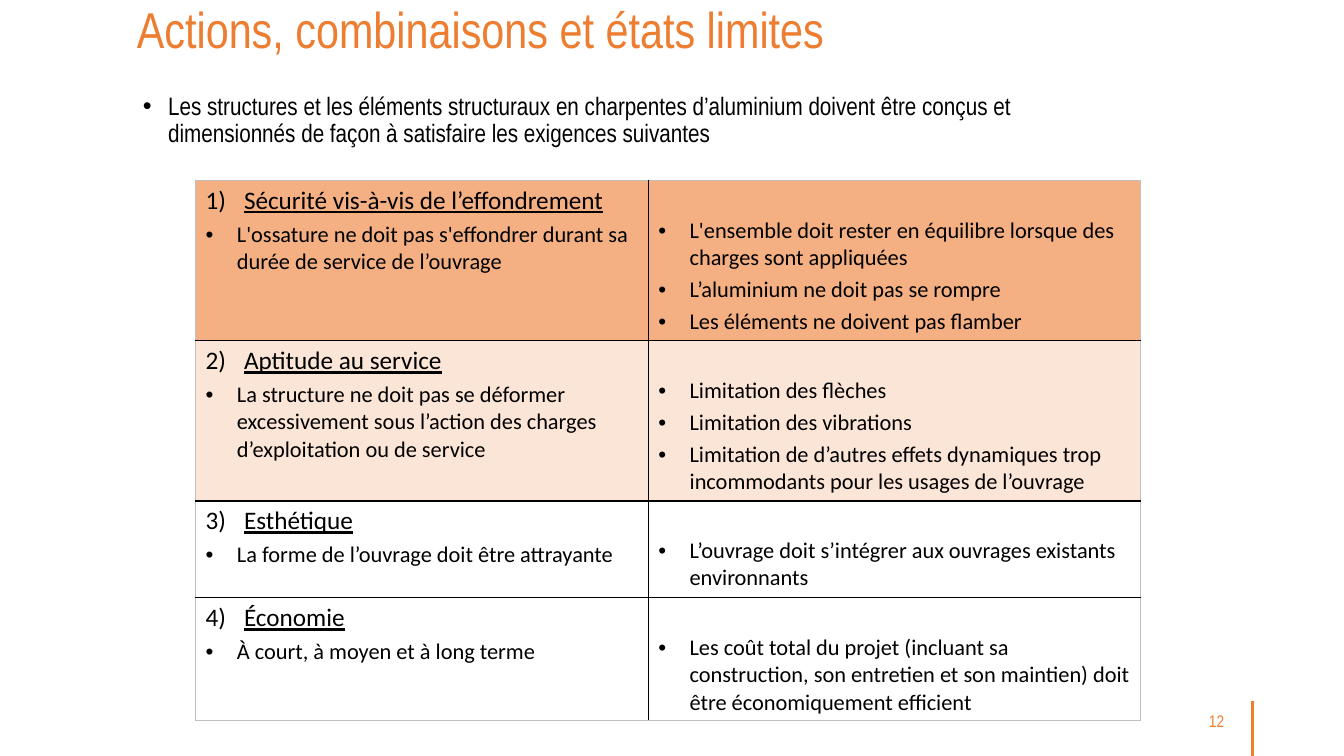
"""Builds the slide on actions, combinations and limit states."""
from dataclasses import dataclass

from lxml.etree import SubElement
from pptx import Presentation
from pptx.dml.color import RGBColor
from pptx.enum.shapes import MSO_CONNECTOR as Connector
from pptx.enum.text import MSO_ANCHOR as Anchor, PP_ALIGN as Align
from pptx.oxml.ns import qn
from pptx.util import Inches, Pt


@dataclass(frozen=True)
class Theme:
    accent: str = "ED7D31"
    ink: str = "000000"
    frame: str = "BFBFBF"
    strong: str = "F4B083"
    pale: str = "FBE5D6"
    display: str = "Arial Narrow"
    body: str = "Calibri"
    title_size: float = 36
    lead_size: float = 18
    item_size: float = 16
    number_size: float = 12
    item_gap: float = 3.2


THEME = Theme()
COLUMNS = (4.49, 4.88)
REQUIREMENTS = [
    (1.59, THEME.strong, "Sécurité vis-à-vis de l’effondrement",
     "L'ossature ne doit pas s'effondrer durant sa durée de service de l’ouvrage",
     ["L'ensemble doit rester en équilibre lorsque des charges sont appliquées",
      "L’aluminium ne doit pas se rompre",
      "Les éléments ne doivent pas flamber"]),
    (1.59, THEME.pale, "Aptitude au service",
     "La structure ne doit pas se déformer excessivement sous l’action des charges "
     "d’exploitation ou de service",
     ["Limitation des flèches",
      "Limitation des vibrations",
      "Limitation de d’autres effets dynamiques trop incommodants pour les usages "
      "de l’ouvrage"]),
    (0.96, None, "Esthétique",
     "La forme de l’ouvrage doit être attrayante",
     ["L’ouvrage doit s’intégrer aux ouvrages existants environnants"]),
    (1.22, None, "Économie",
     "À court, à moyen et à long terme",
     ["Les coût total du projet (incluant sa construction, son entretien et son "
      "maintien) doit être économiquement efficient"]),
]


def add_marker(paragraph, number, indent, hanging):
    """Give a paragraph a numbered marker, or a bullet when number is None."""
    properties = paragraph._p.get_or_add_pPr()
    properties.set("marL", str(Inches(indent)))
    properties.set("indent", str(-Inches(hanging)))
    if number is None:
        SubElement(properties, qn("a:buFont"), typeface="Arial")
        SubElement(properties, qn("a:buChar"), char="•")
    else:
        SubElement(properties, qn("a:buFont"), typeface="+mj-lt")
        SubElement(properties, qn("a:buAutoNum"), type="arabicParenR", startAt=str(number))


def write(paragraph, text, *, size, font=THEME.body, color=THEME.ink, underline=False,
          align=Align.LEFT, line_spacing=None, space_before=0):
    """Write formatted text into a paragraph."""
    paragraph.alignment = align
    paragraph.space_before = Pt(space_before)
    if line_spacing:
        paragraph.line_spacing = line_spacing
    run = paragraph.add_run()
    run.text = text
    run.font.name = font
    run.font.size = Pt(size)
    run.font.underline = underline
    run.font.color.rgb = RGBColor.from_string(color)


def add_text_box(slide, left, top, width, height, anchor=Anchor.TOP):
    """Add a wrapping text box and return its first paragraph."""
    box = slide.shapes.add_textbox(Inches(left), Inches(top), Inches(width), Inches(height))
    box.text_frame.word_wrap = True
    box.text_frame.vertical_anchor = anchor
    return box.text_frame.paragraphs[0]


def add_rule(slide, x, top, bottom):
    """Add the vertical accent line beside the slide number."""
    rule = slide.shapes.add_connector(
        Connector.STRAIGHT, Inches(x), Inches(bottom), Inches(x), Inches(top))
    rule.line.color.rgb = RGBColor.from_string(THEME.accent)
    rule.line.width = Pt(2.25)
    SubElement(rule._element.spPr, qn("a:effectLst"))


def add_borders(cell, outer_sides):
    """Draw pale lines on the outer sides of a cell and black lines inside."""
    properties = cell._tc.get_or_add_tcPr()
    for side in "LRTB":
        outer = side in outer_sides
        border = SubElement(properties, qn(f"a:ln{side}"), w=str(Pt(0.75 if outer else 1)))
        fill = SubElement(border, qn("a:solidFill"))
        SubElement(fill, qn("a:srgbClr"), val=THEME.frame if outer else THEME.ink)


def fill_cell(cell, color):
    """Fill a cell, or clear its fill when color is None."""
    if color is None:
        cell.fill.background()
    else:
        cell.fill.solid()
        cell.fill.fore_color.rgb = RGBColor.from_string(color)


def add_items(frame, items, first):
    """Write bulleted items, starting in the first paragraph when first is true."""
    for index, item in enumerate(items):
        opening = first and index == 0
        paragraph = frame.paragraphs[0] if opening else frame.add_paragraph()
        add_marker(paragraph, None, 0.31, 0.31)
        write(paragraph, item, size=THEME.item_size,
              space_before=0 if opening else THEME.item_gap)


def add_requirements(slide):
    """Add the table of numbered requirements and their criteria."""
    last = len(REQUIREMENTS) - 1
    table = slide.shapes.add_table(
        len(REQUIREMENTS), len(COLUMNS), Inches(1.94), Inches(1.79),
        Inches(sum(COLUMNS)), Inches(sum(row[0] for row in REQUIREMENTS))).table
    table.first_row = table.horz_banding = False
    for column, width in zip(table.columns, COLUMNS):
        column.width = Inches(width)
    for index, (height, color, heading, aim, criteria) in enumerate(REQUIREMENTS):
        table.rows[index].height = Inches(height)
        edges = ("T" if index == 0 else "") + ("B" if index == last else "")
        aim_cell, criteria_cell = table.cell(index, 0), table.cell(index, 1)
        for cell, side in ((aim_cell, "L"), (criteria_cell, "R")):
            add_borders(cell, edges + side)
            fill_cell(cell, color)
        title = aim_cell.text_frame.paragraphs[0]
        add_marker(title, index + 1, 0.38, 0.38)
        write(title, heading, size=THEME.lead_size, underline=True)
        add_items(aim_cell.text_frame, [aim], first=False)
        criteria_cell.margin_top = Inches(0.36)
        add_items(criteria_cell.text_frame, criteria, first=True)


def main():
    """Build the slide and save it."""
    presentation = Presentation()
    presentation.slide_width, presentation.slide_height = Inches(13.33), Inches(7.5)
    slide = presentation.slides.add_slide(presentation.slide_layouts[6])
    add_rule(slide, 12.42, 6.95, 7.5)
    write(add_text_box(slide, 9.42, 6.95, 2.82, 0.4, Anchor.MIDDLE), "12",
          size=THEME.number_size, font=THEME.display, color=THEME.accent, align=Align.RIGHT)
    write(add_text_box(slide, 1.26, 0, 10.74, 1.01), "Actions, combinaisons et états limites",
          size=THEME.title_size, font=THEME.display, color=THEME.accent, line_spacing=0.9)
    lead = add_text_box(slide, 1.26, 0.88, 9.84, 1.1)
    add_marker(lead, None, 0.31, 0.25)
    write(lead, "Les structures et les éléments structuraux en charpentes d’aluminium doivent "
          "être conçus et dimensionnés de façon à satisfaire les exigences suivantes",
          size=THEME.lead_size, font=THEME.display, line_spacing=0.9)
    add_requirements(slide)
    presentation.save("out.pptx")


if __name__ == "__main__":
    main()
